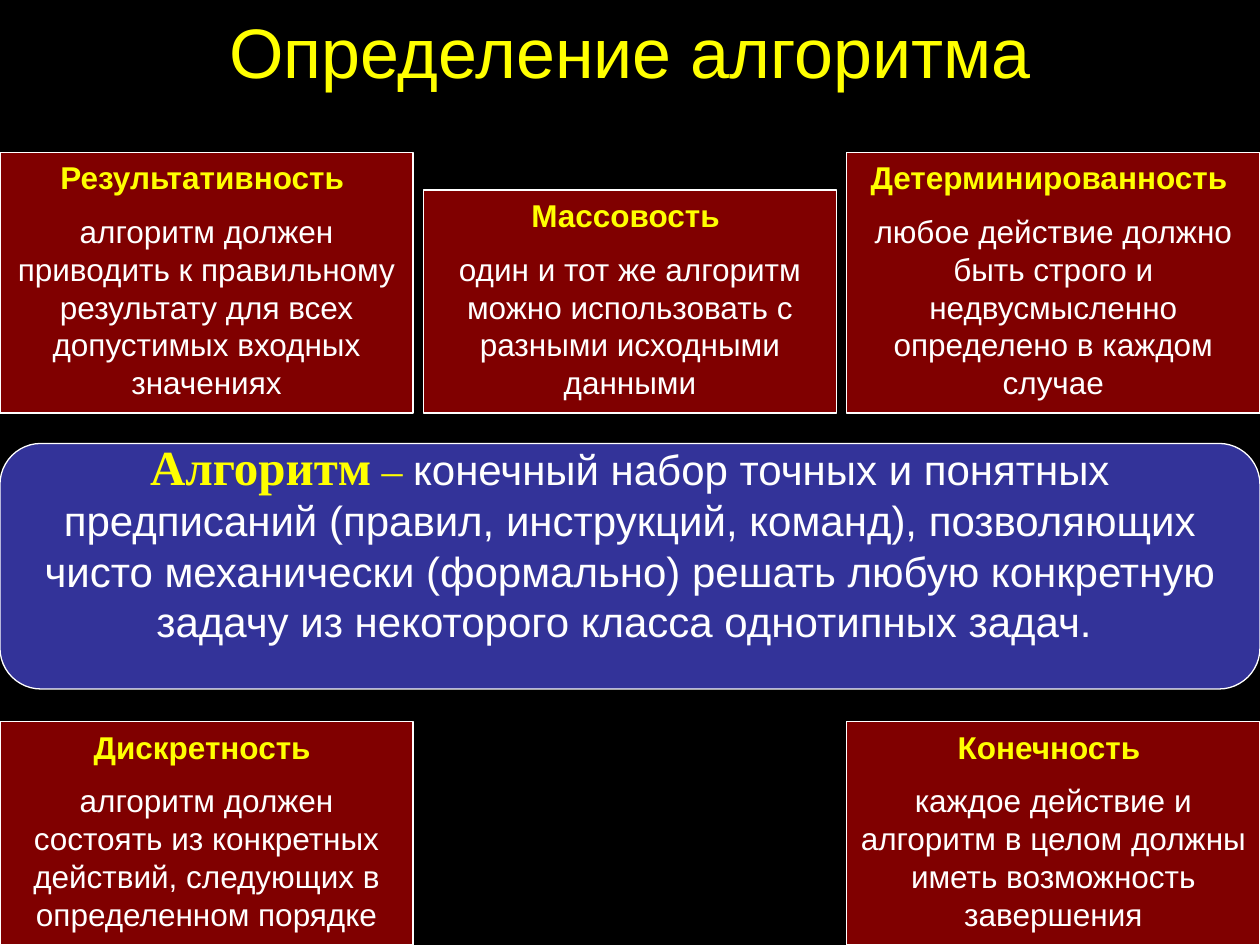
from pptx import Presentation
from pptx import util as u
from pptx.dml.color import RGBColor
from pptx.enum import shapes, text

BLACK = RGBColor(0, 0, 0)
WHITE = RGBColor(255, 255, 255)
YELLOW = RGBColor(255, 255, 0)
MAROON = RGBColor(128, 0, 0)
INDIGO = RGBColor(51, 51, 153)

SLIDE_WIDTH, SLIDE_HEIGHT = 25.4, 19.05
CARD_WIDTH = 8.33
COLUMN_STEP = (SLIDE_WIDTH - CARD_WIDTH) / 2
UPPER_BOTTOM = 8.33
TALL, SHORT = 5.26, 4.5

CARDS = [
    (0, UPPER_BOTTOM, TALL, "Результативность ",
     "алгоритм должен приводить к правильному результату для всех допустимых входных значениях"),
    (1, UPPER_BOTTOM, SHORT, "Массовость ",
     "один и тот же алгоритм можно использовать с разными исходными данными"),
    (2, UPPER_BOTTOM, TALL, "Детерминированность ",
     "любое действие должно быть строго и недвусмысленно определено в каждом случае"),
    (0, SLIDE_HEIGHT, SHORT, "Дискретность ",
     "алгоритм должен состоять из конкретных действий, следующих в определенном порядке"),
    (2, SLIDE_HEIGHT, SHORT, "Конечность ",
     "каждое действие и алгоритм в целом должны иметь возможность завершения"),
]

DEFINITION = (
    "конечный набор точных и понятных предписаний (правил, инструкций, команд), "
    "позволяющих чисто механически (формально) решать любую конкретную задачу "
    "из некоторого класса однотипных задач. "
)


def apply_format(target, values):
    for name, value in values.items():
        setattr(target, name, value)


def add_span(para, words, size, color, name="Arial", bold=False):
    span = para.add_run()
    span.text = words
    apply_format(span.font, {"size": u.Pt(size), "name": name, "bold": bold})
    span.font.color.rgb = color


def add_panel(page, kind, place, color):
    box = page.shapes.add_shape(kind, *(u.Cm(length) for length in place))
    box.shadow.inherit = False
    box.fill.solid()
    box.fill.fore_color.rgb = color
    box.line.color.rgb = WHITE
    box.line.width = u.Pt(0.75)
    return box


def add_title(page, words):
    box = page.shapes.add_textbox(0, 0, u.Cm(SLIDE_WIDTH), u.Cm(2.03))
    apply_format(box.text_frame, {"word_wrap": True, "vertical_anchor": text.MSO_ANCHOR.MIDDLE})
    para = box.text_frame.paragraphs[0]
    para.alignment = text.PP_ALIGN.CENTER
    add_span(para, words, 40, YELLOW)


def add_card(page, column, bottom, height, heading, body):
    place = (column * COLUMN_STEP, bottom - height, CARD_WIDTH, height)
    box = add_panel(page, shapes.MSO_SHAPE.RECTANGLE, place, MAROON)
    frame = box.text_frame
    apply_format(frame, {"word_wrap": True, "vertical_anchor": text.MSO_ANCHOR.TOP})
    for para, words, color, bold in (
        (frame.paragraphs[0], heading, YELLOW, True),
        (frame.add_paragraph(), body, WHITE, False),
    ):
        apply_format(para, {"alignment": text.PP_ALIGN.CENTER, "space_before": u.Pt(9)})
        add_span(para, words, 18, color, bold=bold)


def add_definition(page):
    box = add_panel(page, shapes.MSO_SHAPE.FLOWCHART_ALTERNATE_PROCESS,
                    (0, 8.94, SLIDE_WIDTH, 4.95), INDIGO)
    apply_format(box.text_frame, {
        "word_wrap": True,
        "vertical_anchor": text.MSO_ANCHOR.MIDDLE,
        "margin_bottom": u.Cm(1.14),
    })
    para = box.text_frame.paragraphs[0]
    para.alignment = text.PP_ALIGN.CENTER
    add_span(para, "Алгоритм", 28, YELLOW, "Times New Roman", True)
    add_span(para, " – ", 24, YELLOW, "Times New Roman")
    add_span(para, DEFINITION, 24, WHITE)


def main():
    deck = Presentation()
    apply_format(deck, {"slide_width": u.Cm(SLIDE_WIDTH), "slide_height": u.Cm(SLIDE_HEIGHT)})
    page = deck.slides.add_slide(deck.slide_layouts[6])
    page.background.fill.solid()
    page.background.fill.fore_color.rgb = BLACK
    add_title(page, "Определение алгоритма")
    add_definition(page)
    for card in CARDS:
        add_card(page, *card)
    deck.save("out.pptx")


if __name__ == "__main__":
    main()
